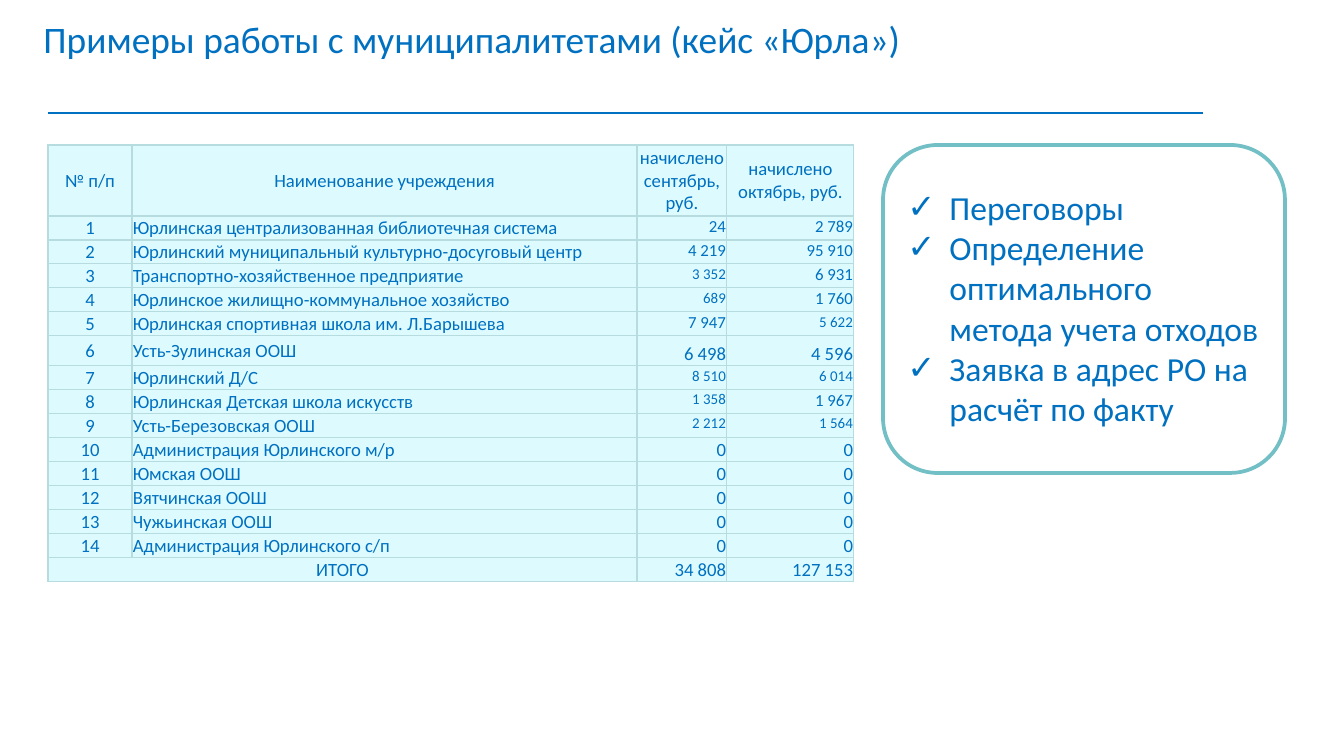
import pptx
import pptx.dml.color
import pptx.enum.shapes
import pptx.enum.text
import pptx.oxml
import pptx.oxml.ns
import pptx.util
import lxml.etree

PX = 914400 / 134.4
BLUE, TEAL, PALE, GRID = "0070C0", "72BFC5", "DDFBFF", "B6DCDF"
ALIGN = pptx.enum.text.PP_ALIGN
ANCHOR = pptx.enum.text.MSO_ANCHOR


def px(*lengths):
    """Turn pixel lengths into a list of EMU."""
    return [pptx.util.Emu(round(length * PX)) for length in lengths]


def color(value):
    return pptx.dml.color.RGBColor.from_string(value)


deck = pptx.Presentation()
deck.slide_width, deck.slide_height = px(1344, 756)
page = deck.slides.add_slide(deck.slide_layouts[1])

# Title and checklist
actions = [
    "Переговоры",
    "Определение оптимального метода учета отходов",
    "Заявка в адрес РО на расчёт по факту",
]
texts = [
    (page.shapes.title, (30, 9, 1042, 59), 20,
     ["Примеры работы с муниципалитетами (кейс «Юрла»)"]),
    (page.placeholders[1], (894, 180, 380, 298), 18, actions),
]
for box, place, size, lines in texts:
    box.left, box.top, box.width, box.height = px(*place)
    frame = box.text_frame
    frame.text = "\n".join(lines)
    frame.word_wrap = True
    frame.auto_size = pptx.enum.text.MSO_AUTO_SIZE.SHAPE_TO_FIT_TEXT
    frame.vertical_anchor = ANCHOR.TOP
    for para in frame.paragraphs:
        para.alignment = ALIGN.LEFT
        para.space_before = pptx.util.Pt(0)
        if lines is actions:
            properties = para._p.get_or_add_pPr()
            indent = px(42)[0]
            properties.set("marL", str(indent))
            properties.set("indent", str(-indent))
            bullet = lxml.etree.SubElement(properties, pptx.oxml.ns.qn("a:buChar"))
            bullet.set("char", "✓")
        para.font.color.rgb = color(BLUE)
        for name, value in {"name": "Calibri", "size": pptx.util.Pt(size)}.items():
            setattr(para.font, name, value)

# Rule under the title
start_x, start_y, end_x, end_y = px(48, 113, 1203, 113)
rule = page.shapes.add_connector(
    pptx.enum.shapes.MSO_CONNECTOR.STRAIGHT, start_x, start_y, end_x, end_y)
rule.line.color.rgb = color(BLUE)
rule.line.width = pptx.util.Pt(1.25)
lxml.etree.SubElement(rule._element.spPr, pptx.oxml.ns.qn("a:effectLst"))

# Charges: institution, September, October, and the sizes of both amounts
charges = [
    ("Юрлинская централизованная библиотечная система", "24", "2 789", 9, 9),
    ("Юрлинский муниципальный культурно-досуговый центр", "4 219", "95 910", 9, 9),
    ("Транспортно-хозяйственное предприятие", "3 352", "6 931", 8, 9),
    ("Юрлинское жилищно-коммунальное хозяйство", "689", "1 760", 8, 9),
    ("Юрлинская спортивная школа им. Л.Барышева", "7 947", "5 622", 9, 8),
    ("Усть-Зулинская ООШ", "6 498", "4 596", 10, 10),
    ("Юрлинский Д/С", "8 510", "6 014", 8, 8),
    ("Юрлинская Детская школа искусств", "1 358", "1 967", 8, 9),
    ("Усть-Березовская ООШ", "2 212", "1 564", 8, 8),
]
for name in ("Администрация Юрлинского м/р", "Юмская ООШ", "Вятчинская ООШ",
             "Чужьинская ООШ", "Администрация Юрлинского с/п"):
    charges.append((name, "0", "0", 10, 10))

header = ["№ п/п", "Наименование учреждения",
          "начислено сентябрь, руб.", "начислено октябрь, руб."]
rows = [(header, (10, 10, 10, 10))]
for number, (name, september, october, *sizes) in enumerate(charges, 1):
    rows.append(([str(number), name, september, october], (10, 10, *sizes)))
rows.append((["ИТОГО", "", "34 808", "127 153"], (10, 10, 10, 10)))

widths = [84, 505, 90, 127]
heights = [71] + [24] * (len(rows) - 1)
heights[6] = 30
table = page.shapes.add_table(
    len(rows), len(widths), *px(48, 145, sum(widths), sum(heights))).table
table.first_row = table.horz_banding = False
for column, width in zip(table.columns, px(*widths)):
    column.width = width
for row, height in zip(table.rows, px(*heights)):
    row.height = height

last = len(rows) - 1
for row_index, (values, sizes) in enumerate(rows):
    for column_index, (value, size) in enumerate(zip(values, sizes)):
        cell = table.cell(row_index, column_index)
        amount = column_index > 1 and row_index > 0
        anchor = ANCHOR.MIDDLE
        if amount or row_index == last:
            anchor = ANCHOR.BOTTOM if size == 10 else ANCHOR.TOP
        align = ALIGN.RIGHT if amount else ALIGN.CENTER
        if column_index == 1 and row_index > 0:
            align = ALIGN.LEFT
        inset, none = px(1, 0)
        layout = {"margin_left": inset, "margin_right": inset, "margin_top": inset,
                  "margin_bottom": none, "vertical_anchor": anchor}
        for name, setting in layout.items():
            setattr(cell, name, setting)
        para = cell.text_frame.paragraphs[0]
        para.alignment = align
        para.font.size = pptx.util.Pt(size)
        if value:
            span = para.add_run()
            span.text = value
            span.font.name = "Calibri"
            span.font.size = pptx.util.Pt(size)
            span.font.color.rgb = color(BLUE)
        properties = cell._tc.get_or_add_tcPr()
        for side in ("lnL", "lnR", "lnT", "lnB"):
            properties.append(pptx.oxml.parse_xml(
                f'<a:{side} {pptx.oxml.ns.nsdecls("a")} w="9525"><a:solidFill>'
                f'<a:srgbClr val="{GRID}"/></a:solidFill></a:{side}>'))
        cell.fill.solid()
        cell.fill.fore_color.rgb = color(PALE)
table.cell(last, 0).merge(table.cell(last, 1))

# Frame around the checklist
border = page.shapes.add_shape(
    pptx.enum.shapes.MSO_SHAPE.ROUNDED_RECTANGLE, *px(883, 145, 402, 328))
border.shadow.inherit = False
border.fill.background()
border.line.color.rgb = color(TEAL)
border.line.width = pptx.util.Pt(2)

deck.save("out.pptx")
